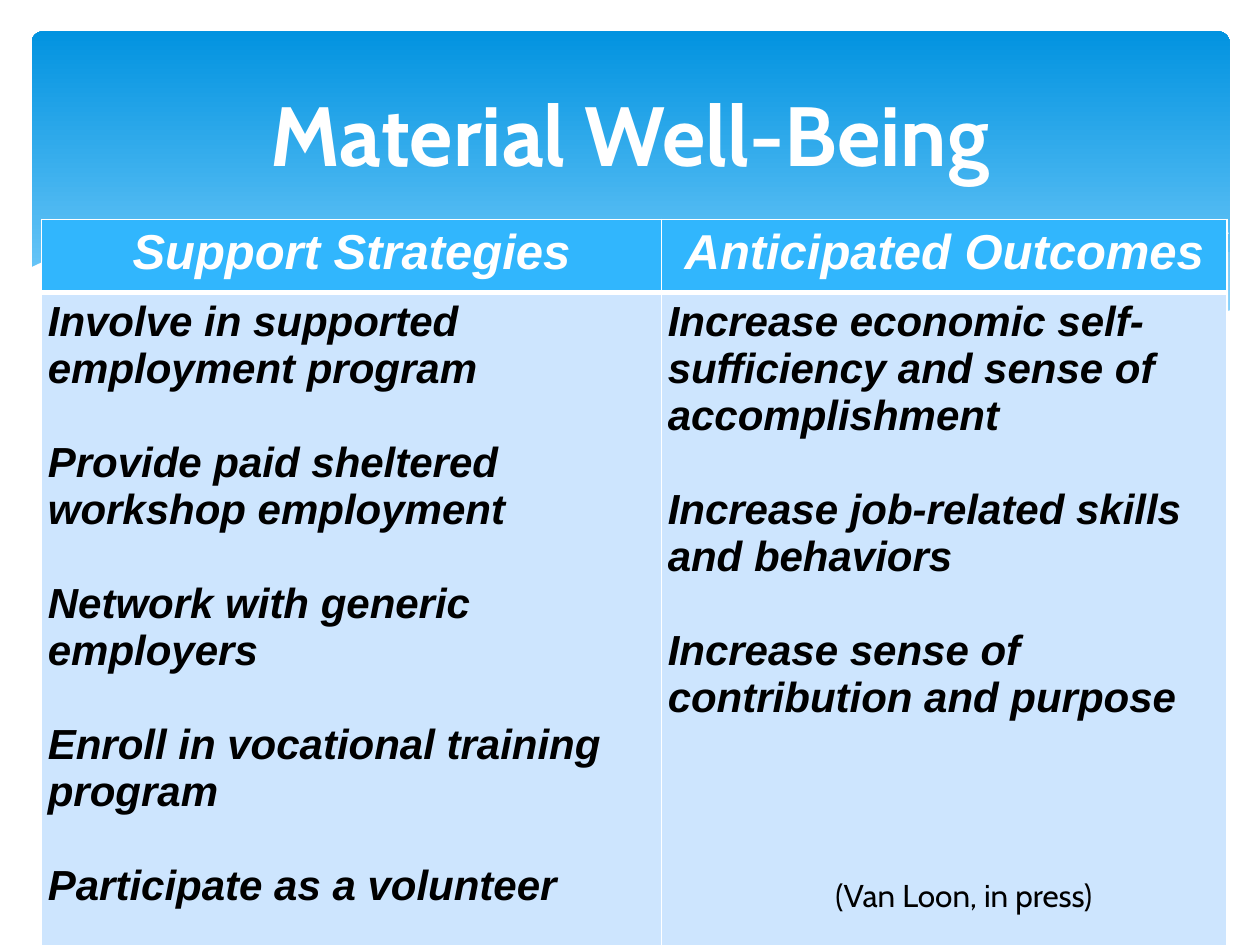
from lxml.etree import SubElement
from pptx import Presentation
from pptx.dml.color import RGBColor
from pptx.enum.shapes import MSO_SHAPE
from pptx.enum.text import MSO_ANCHOR, PP_ALIGN
from pptx.oxml.ns import qn
from pptx.util import Pt

SCALE = 9144  # EMU per px, 100 px to the inch
MARGIN = 5

WHITE = RGBColor(0xFF, 0xFF, 0xFF)
BLACK = RGBColor(0x00, 0x00, 0x00)
SKY = RGBColor(0x83, 0xD3, 0xFE)
DEEP_BLUE = RGBColor(0x02, 0x93, 0xE0)
MIST = RGBColor(0xC6, 0xE7, 0xFC)
HEADER_BLUE = RGBColor(0x31, 0xB6, 0xFD)
CELL_BLUE = RGBColor(0xCD, 0xE5, 0xFE)

# Wave outlines, relative to the left top corner of the banner
RIGHT_WAVE = [(950, 175), (896, 185), (836, 198), (754, 218), (704, 228), (636, 240),
              (680, 246), (732, 250), (789, 253), (847, 251), (896, 240), (951, 222), (951, 175)]
MIDDLE_WAVE = [(868, 248), (782, 235), (681, 215), (604, 197), (530, 180), (464, 169),
               (395, 162), (336, 161), (261, 166), (337, 178), (424, 197), (505, 215),
               (593, 233), (670, 245), (736, 252), (793, 254), (842, 251)]
LONG_CREST = [(284, 170), (310, 165), (362, 162), (425, 163), (485, 167), (557, 175),
              (640, 188), (735, 208), (806, 226), (882, 247)]
RIGHT_CREST = [(588, 232), (647, 216), (723, 198), (811, 179), (885, 167), (950, 160)]
WHITE_WAVE = [(952, 221), (915, 234), (862, 246), (798, 252), (736, 251), (663, 243),
              (578, 229), (478, 208), (366, 182), (290, 169), (205, 160), (136, 159),
              (81, 164), (34, 174), (15, 180), (-2, 188), (-2, 304), (952, 304)]

HEADERS = ["Support Strategies", "Anticipated Outcomes"]
COLUMNS = [
    ["Involve in supported employment program",
     "Provide paid sheltered workshop employment",
     "Network with generic employers",
     "Enroll in vocational training program",
     "Participate as a volunteer"],
    ["Increase economic self-sufficiency and sense of accomplishment",
     "Increase job-related skills and behaviors",
     "Increase sense of contribution and purpose"],
]


def px(*lengths):
    return [length * SCALE for length in lengths]


def set_margins(holder):
    (holder.margin_left, holder.margin_top,
     holder.margin_right, holder.margin_bottom) = px(*[MARGIN] * 4)


def style_text(paragraph, font_name, size, color, bold=False, italic=False):
    for run in paragraph.runs:
        font = run.font
        font.name, font.size = font_name, Pt(size)
        font.bold, font.italic = bold, italic
        font.color.rgb = color


def add_wave(slide, left, top, points, fill=None, opacity=100):
    """A filled outline, or an open white crest when no fill is given."""
    placed = [(left + x, top + y) for x, y in points]
    builder = slide.shapes.build_freeform(*placed[0], scale=SCALE)
    builder.add_line_segments(placed[1:], close=fill is not None)
    shape = builder.convert_to_shape()
    shape.shadow.inherit = False
    if fill is None:
        shape.fill.background()
        shape.line.color.rgb = WHITE
        shape.line.width = Pt(0.75)
        return
    shape.fill.solid()
    shape.fill.fore_color.rgb = fill
    shape.line.fill.background()
    if opacity < 100:
        color = shape._element.spPr.find(".//" + qn("a:srgbClr"))
        SubElement(color, qn("a:alpha"), val=str(opacity * 1000))


def add_banner(slide, left, top, width, height):
    banner = slide.shapes.add_shape(MSO_SHAPE.ROUNDED_RECTANGLE, *px(left, top, width, height))
    banner.adjustments[0] = 0.034
    banner.shadow.inherit = False
    banner.line.fill.background()
    banner.fill.gradient()
    banner.fill.gradient_angle = 90
    for stop, color, position in zip(banner.fill.gradient_stops, (SKY, DEEP_BLUE), (0.1, 1)):
        stop.color.rgb, stop.position = color, position
    add_wave(slide, left, top, RIGHT_WAVE, MIST, 29)
    add_wave(slide, left, top, MIDDLE_WAVE, MIST, 40)
    add_wave(slide, left, top, LONG_CREST)
    add_wave(slide, left, top, RIGHT_CREST)
    add_wave(slide, left, top, WHITE_WAVE, WHITE)


def format_cell(cell, fill, top_border, bottom_border):
    set_margins(cell)
    properties = cell._tc.get_or_add_tcPr()
    for side, width in (("L", 1), ("R", 1), ("T", top_border), ("B", bottom_border)):
        line = SubElement(properties, qn("a:ln" + side), w=str(Pt(width)))
        solid = SubElement(line, qn("a:solidFill"))
        SubElement(solid, qn("a:srgbClr"), val=str(WHITE))
    cell.fill.solid()
    cell.fill.fore_color.rgb = fill


def add_strategy_table(slide, left, top, column_widths, row_heights):
    frame = slide.shapes.add_table(
        2, 2, *px(left, top, sum(column_widths), sum(row_heights)))
    table = frame.table
    table.first_row = table.horz_banding = False
    for row, height in zip(table.rows, px(*row_heights)):
        row.height = height
    for index, width in enumerate(px(*column_widths)):
        table.columns[index].width = width
        header, body = table.cell(0, index), table.cell(1, index)

        format_cell(header, HEADER_BLUE, 1, 3)
        header.text_frame.text = HEADERS[index]
        paragraph = header.text_frame.paragraphs[0]
        paragraph.alignment = PP_ALIGN.CENTER
        style_text(paragraph, "Arial", 28, WHITE, True, True)

        format_cell(body, CELL_BLUE, 3, 1)
        body.text_frame.text = "\n".join(COLUMNS[index])
        for number, paragraph in enumerate(body.text_frame.paragraphs):
            paragraph.space_before = Pt(27 if number else 0)
            style_text(paragraph, "Arial", 24, BLACK, True, True)


def place_title(slide, left, top, width, height):
    title = slide.shapes.title
    title.left, title.top, title.width, title.height = px(left, top, width, height)
    slide.shapes._spTree.append(title._element)  # bring in front of the banner
    frame = title.text_frame
    frame.text = "Material Well-Being"
    frame.vertical_anchor = MSO_ANCHOR.MIDDLE
    set_margins(frame)
    frame.paragraphs[0].alignment = PP_ALIGN.CENTER
    style_text(frame.paragraphs[0], "Cabin", 48, WHITE, True)


def add_citation(slide, left, top, width, height):
    frame = slide.shapes.add_textbox(*px(left, top, width, height)).text_frame
    frame.word_wrap = True
    set_margins(frame)
    frame.text = "(Van Loon, in press)"
    style_text(frame.paragraphs[0], "Cabin", 18, BLACK)


def main():
    presentation = Presentation()
    presentation.slide_width, presentation.slide_height = px(1000, 750)
    slide = presentation.slides.add_slide(presentation.slide_layouts[5])
    add_banner(slide, 25, 25, 951, 270)
    add_strategy_table(slide, 33, 174, (492, 449), (58, 646))
    place_title(slide, 50, 37, 900, 137)
    add_citation(slide, 658, 690, 302, 39)
    presentation.save("out.pptx")


if __name__ == "__main__":
    main()
